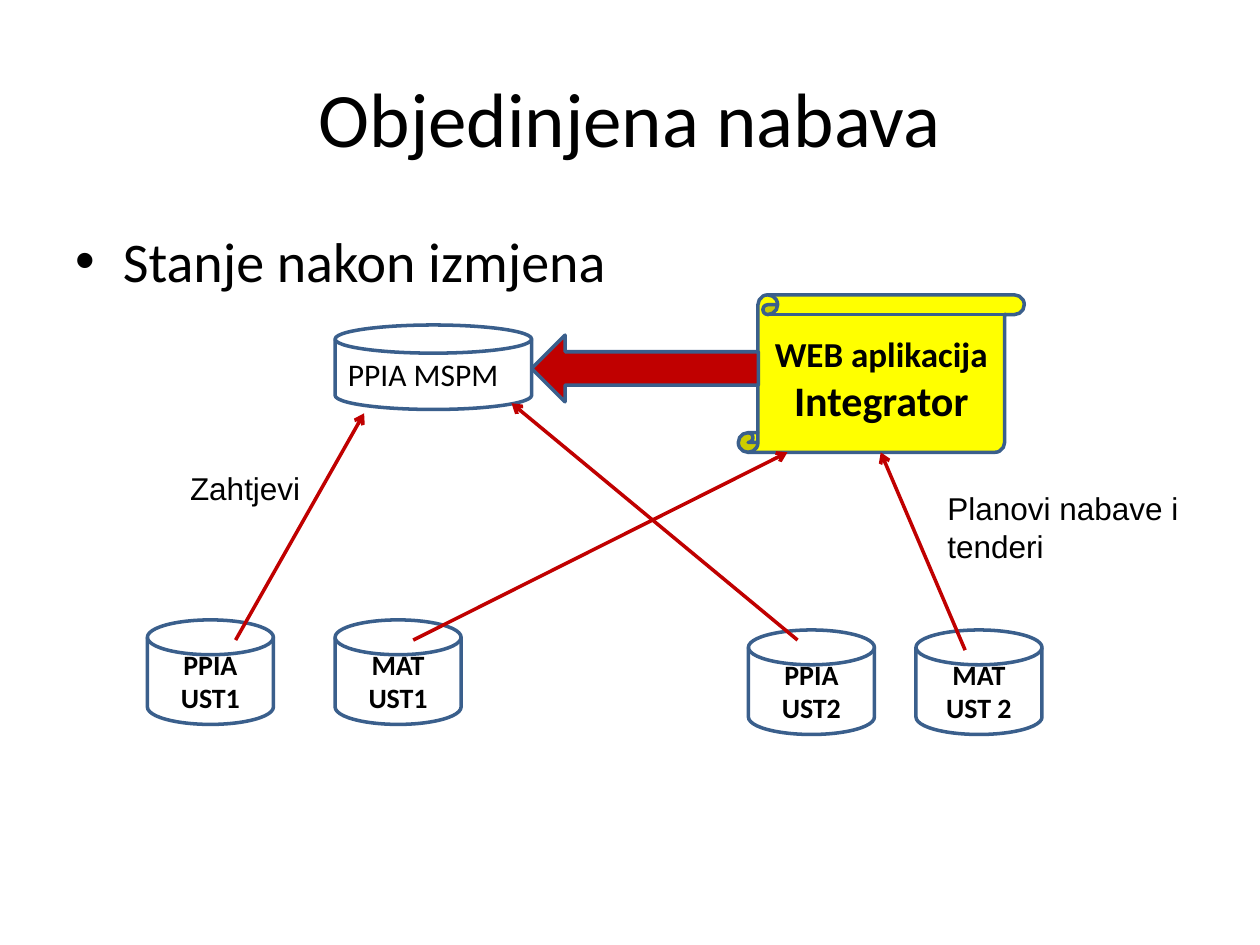
from lxml import etree
from pptx import Presentation
from pptx.dml.color import RGBColor
from pptx.enum.shapes import MSO_CONNECTOR, MSO_SHAPE
from pptx.enum.text import MSO_ANCHOR, PP_ALIGN
from pptx.oxml.ns import qn
from pptx.util import Inches, Pt

COLORS = {"text": "000000", "paper": "FFFFFF", "edge": "3A5F8C",
          "flow": "C00000", "scroll": "FFFF00"}


def rgb(name):
    return RGBColor.from_string(COLORS[name])


def place(item, left, top, width, height):
    item.left, item.top = Inches(left), Inches(top)
    item.width, item.height = Inches(width), Inches(height)


def write(frame, text, sizes, bold=False, align=PP_ALIGN.CENTER, face="Calibri"):
    frame.text = text
    for paragraph, size in zip(frame.paragraphs, sizes):
        paragraph.alignment = align
        for run in paragraph.runs:
            run.font.name, run.font.size = face, Pt(size)
            run.font.bold = bold
            run.font.color.rgb = rgb("text")


def add_outlined(slide, preset, box, fill):
    shape = slide.shapes.add_shape(preset, *map(Inches, box))
    shape.shadow.inherit = False
    shape.fill.solid()
    shape.fill.fore_color.rgb = rgb(fill)
    shape.line.color.rgb = rgb("edge")
    shape.line.width = Pt(2)
    shape.text_frame.word_wrap = True
    shape.text_frame.vertical_anchor = MSO_ANCHOR.MIDDLE
    return shape


def add_database(slide, box, text, size=16, bold=True):
    disk = add_outlined(slide, MSO_SHAPE.FLOWCHART_MAGNETIC_DISK, box, "paper")
    write(disk.text_frame, text, [size] * 2, bold)
    return disk


def add_flow(slide, start, end):
    flow = slide.shapes.add_connector(
        MSO_CONNECTOR.STRAIGHT, *map(Inches, (*start, *end)))
    flow.line.color.rgb = rgb("flow")
    flow.line.width = Pt(2)
    etree.SubElement(flow.line._get_or_add_ln(), qn("a:tailEnd"), type="arrow")
    etree.SubElement(flow._element.spPr, qn("a:effectLst"))


def add_label(slide, box, text):
    label = slide.shapes.add_textbox(*map(Inches, box))
    label.text_frame.word_wrap = False
    write(label.text_frame, text, [18] * 2, align=PP_ALIGN.LEFT, face="Arial")


def add_heading(slide, title_box, body_box):
    title, body = slide.shapes.title, slide.placeholders[1]
    place(title, *title_box)
    title.text_frame.vertical_anchor = MSO_ANCHOR.MIDDLE
    write(title.text_frame, "Objedinjena nabava", [44])

    place(body, *body_box)
    body.text_frame.text = "Stanje nakon izmjena"
    properties = body.text_frame.paragraphs[0]._p.get_or_add_pPr()
    etree.SubElement(properties, qn("a:buNone"))
    write(body.text_frame, "Stanje nakon izmjena", [32], align=PP_ALIGN.LEFT)


def add_institution(slide, left, top, gap, names):
    for index, name in enumerate(names):
        add_database(slide, (left + index * gap, top, 1, 0.83), name)


def add_procurement(slide, left, top):
    central = add_database(slide, (left, top + 0.24, 1.56, 0.67),
                           "PPIA MSPM", 18, False)
    central.text_frame.margin_right = Inches(0.26)

    integrator = add_outlined(slide, MSO_SHAPE.VERTICAL_SCROLL,
                              (left + 3.2, top, 2.27, 1.25), "scroll")
    write(integrator.text_frame, "WEB aplikacija\nIntegrator", (20, 24), True)

    add_outlined(slide, MSO_SHAPE.LEFT_ARROW,
                 (left + 1.56, top + 0.32, 1.8, 0.53), "flow")


def main():
    deck = Presentation()
    deck.slide_width, deck.slide_height = Inches(10), Inches(7.5)
    slide = deck.slides.add_slide(deck.slide_layouts[1])

    add_heading(slide, (0.5, 0.3, 9, 1.25), (0.5, 1.75, 9, 4.95))
    add_institution(slide, 1.17, 4.92, 1.49, ("PPIA UST1", "MAT UST1"))
    add_institution(slide, 5.94, 5, 1.33, ("PPIA UST2", "MAT\nUST 2"))
    add_procurement(slide, 2.66, 2.34)
    for start, end in (((6.33, 5.08), (4.06, 3.2)),
                       ((1.87, 5.08), (2.89, 3.28)),
                       ((3.28, 5.08), (6.25, 3.59)),
                       ((7.66, 5.16), (6.99, 3.59))):
        add_flow(slide, start, end)
    add_label(slide, (7.42, 3.83, 2.12, 0.71), "Planovi nabave i\ntenderi")
    add_label(slide, (1.41, 3.67, 1.09, 0.4), "Zahtjevi")

    deck.save("out.pptx")


if __name__ == "__main__":
    main()
